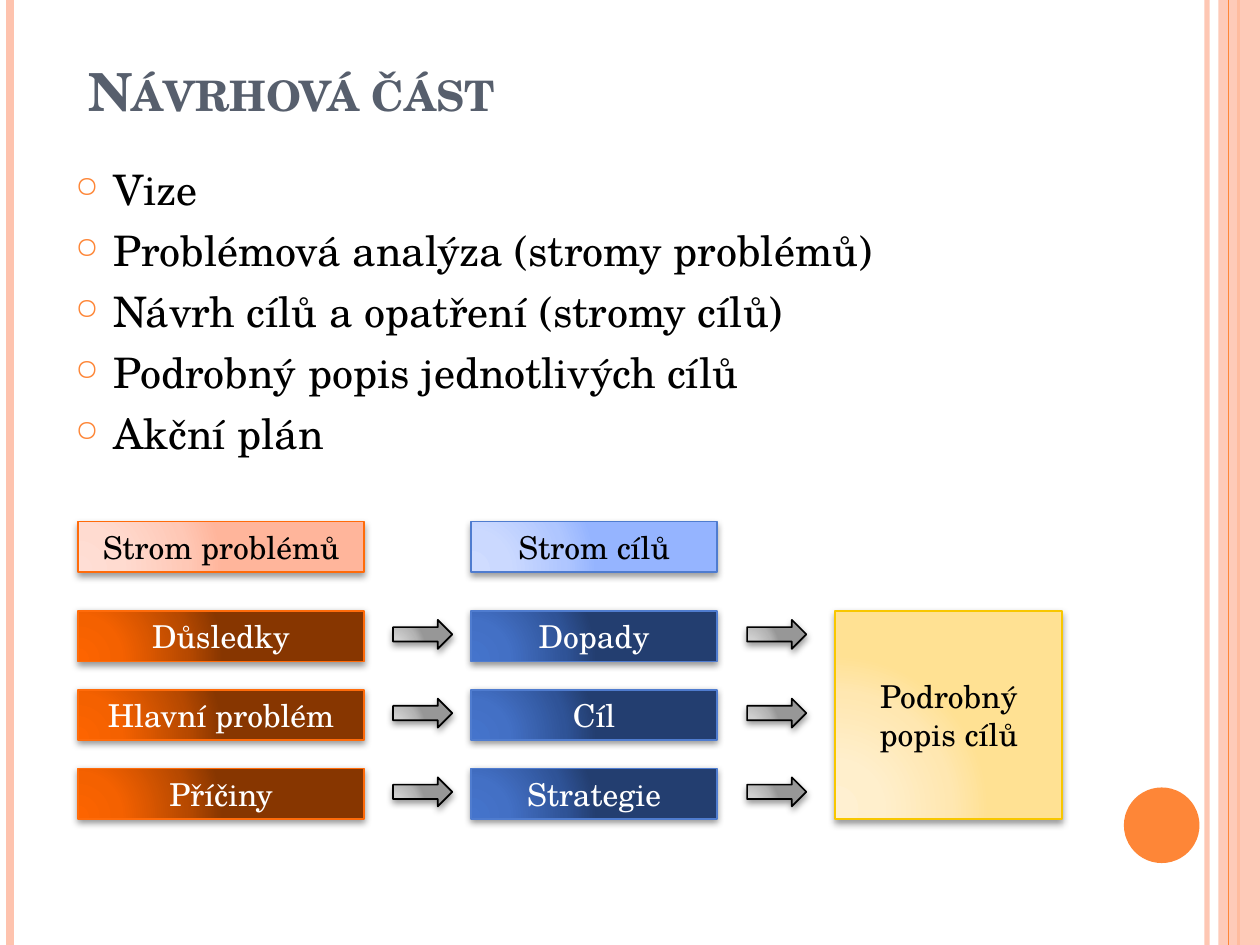
from pptx import Presentation, oxml
from pptx import util as u
from pptx.dml import color
from pptx.enum import shapes, text
from pptx.oxml import ns

FONT = "TeX Gyre Schola"
ORANGE = ["FD6400", "F46100", "B74900", "873600"]
PEACH = ["FFDED5", "FFDBD0", "FFC8B6", "FFB59B"]
BLUE = ["4574CC", "4370C5", "2F5397", "233E70"]
SKY = ["CFDCFF", "CBD9FF", "AFC6FF", "95B4FF"]
GREY = ["D3D3D3", "CFCFCF", "B4B4B4", "979797"]
CREAM = ["FFF0D1", "FFEFCC", "FFE7B1", "FFE193"]
KIND = shapes.MSO_SHAPE
HIGH = 0.4


def paint(fill, tone, alpha=100):
    """Fill with a hex colour at a percentage of opacity."""
    fill.solid()
    fill.fore_color.rgb = color.RGBColor.from_string(tone)
    if alpha < 100:
        clr = fill._xPr.find(".//" + ns.qn("a:srgbClr"))
        clr.append(oxml.parse_xml(
            f'<a:alpha {ns.nsdecls("a")} val="{alpha * 1000}"/>'))


def write(para, words, size=18, tone="000000", bold=False, small=False,
          align=None, before=0):
    """Put one formatted run into a paragraph."""
    para.alignment = align
    para.space_before = u.Pt(before)
    run = para.add_run()
    run.text = words
    run.font.name = FONT
    run.font.size = u.Pt(size)
    run.font.bold = bold
    paint(run.font.fill, tone)
    if small:
        run.font._element.set("cap", "small")


def place(slide, kind, box):
    """Add a preset shape at a box in inches."""
    return slide.shapes.add_shape(kind, *map(u.Inches, box))


def shade(shape, tones, edge, alpha=40, dist=2):
    """Give a shape its radial gradient, outline and soft shadow."""
    stops = "".join(
        f'<a:gs pos="{pos * 1000}"><a:srgbClr val="{tone}"/></a:gs>'
        for pos, tone in zip((0, 30, 75, 100), tones))
    props = shape._element.spPr
    props.find(ns.qn("a:prstGeom")).addnext(oxml.parse_xml(
        f'<a:gradFill {ns.nsdecls("a")} rotWithShape="1"><a:gsLst>{stops}'
        '</a:gsLst><a:path path="circle"><a:fillToRect l="5000" t="100000" '
        'r="120000" b="10000"/></a:path></a:gradFill>'))
    paint(shape.line.fill, edge)
    shape.line.width = u.Pt(1)
    props.append(oxml.parse_xml(
        f'<a:effectLst {ns.nsdecls("a")}><a:outerShdw blurRad="{u.Pt(4)}" '
        f'dist="{u.Pt(dist)}" dir="5400000" rotWithShape="0">'
        f'<a:srgbClr val="000000"><a:alpha val="{alpha * 1000}"/></a:srgbClr>'
        '</a:outerShdw></a:effectLst>'))


def card(slide, box, words, tones, edge, tone="000000", **shadow):
    """Add a shaded box with centred text."""
    shape = place(slide, KIND.RECTANGLE, box)
    shade(shape, tones, edge, **shadow)
    frame = shape.text_frame
    frame.word_wrap = True
    frame.vertical_anchor = text.MSO_ANCHOR.MIDDLE
    write(frame.paragraphs[0], words, tone=tone, align=text.PP_ALIGN.CENTER)


def rule(slide, left, tone, width, alpha=100):
    """Draw a vertical line over the full slide height."""
    line = slide.shapes.add_connector(
        shapes.MSO_CONNECTOR.STRAIGHT, u.Inches(left), 0,
        u.Inches(left), u.Inches(7.5))
    paint(line.line.fill, tone, alpha)
    line.line.width = u.Pt(width)
    line._element.spPr.append(
        oxml.parse_xml(f'<a:effectLst {ns.nsdecls("a")}/>'))


def plain(slide, kind, box, tone, alpha=100):
    """Add a flat shape without outline."""
    shape = place(slide, kind, box)
    shape.shadow.inherit = False
    paint(shape.fill, tone, alpha)
    shape.line.fill.background()


def frame_page(slide):
    """Draw the side rules, the band and the dot."""
    rule(slide, 9.58, "FEC3AE", 3, 93)
    rule(slide, 0.08, "FEC3AE", 4.5)
    rule(slide, 9.83, "FE8637", 1.5)
    plain(slide, KIND.RECTANGLE, (9.67, 0, 0.33, 7.5), "FEC3AE", 87)
    rule(slide, 9.75, "FE8637", 0.75)
    plain(slide, KIND.OVAL, (8.92, 6.25, 0.6, 0.6), "FE8637")


def head(slide, box, words):
    """Place and format the title."""
    title = slide.shapes.title
    title.left, title.top, title.width, title.height = map(u.Inches, box)
    frame = title.text_frame
    frame.auto_size = text.MSO_AUTO_SIZE.NONE
    frame.vertical_anchor = text.MSO_ANCHOR.BOTTOM
    frame.margin_left = u.Inches(0.2)
    write(frame.paragraphs[0], words, size=30, tone="575F6D", bold=True,
          small=True, align=text.PP_ALIGN.LEFT)


def bullets(slide, box, items):
    """Add the bulleted list."""
    frame = slide.shapes.add_textbox(*map(u.Inches, box)).text_frame
    frame.word_wrap = True
    for num, item in enumerate(items):
        para = frame.add_paragraph() if num else frame.paragraphs[0]
        write(para, item, size=24, before=6)
        props = para._p.get_or_add_pPr()
        props.set("marL", str(u.Inches(0.3)))
        props.set("indent", str(u.Inches(-0.3)))
        for part in ('buClr {}><a:srgbClr val="FE8637"/></a:buClr>',
                     'buSzPct {} val="70000"/>', 'buChar {} char="○"/>'):
            props.append(oxml.parse_xml(
                "<a:" + part.format(ns.nsdecls("a"))))


def tree(slide, box, name, items, light, dark, edge, step):
    """Stack a heading box and its levels, each followed by an arrow."""
    left, top, width, gap = box
    card(slide, (left, top, width, HIGH), name, light, edge)
    for num, item in enumerate(items):
        row = top + 0.71 + num * step
        card(slide, (left, row, width, HIGH), item, dark, edge,
             tone="FFFFFF", alpha=42, dist=1.6)
        arrow = place(slide, KIND.RIGHT_ARROW,
                      (left + width + gap, row + 0.07, 0.47, 0.23))
        shade(arrow, GREY, "000000")


def diagram(slide, left, top):
    """Lead from both trees to the detailed description."""
    step = 0.625
    tree(slide, (left, top, 2.27, 0.23), "Strom problémů",
         ["Důsledky", "Hlavní problém", "Příčiny"],
         PEACH, ORANGE, "FF6B0A", step)
    tree(slide, (left + 3.12, top, 1.95, 0.24), "Strom cílů",
         ["Dopady", "Cíl", "Strategie"], SKY, BLUE, "4F7CCF", step)
    card(slide, (left + 6.01, top + 0.71, 1.8, 2 * step + HIGH),
         "Podrobný popis cílů", CREAM, "F8C700")


def main():
    """Build the slide and save it."""
    deck = Presentation()
    deck.slide_width, deck.slide_height = u.Inches(10), u.Inches(7.5)
    slide = deck.slides.add_slide(deck.slide_layouts.get_by_name("Title Only"))
    frame_page(slide)
    head(slide, (0.5, 0.3, 8.17, 0.72), "Návrhová část")
    bullets(slide, (0.5, 1.25, 8.17, 5.83), [
        "Vize",
        "Problémová analýza (stromy problémů)",
        "Návrh cílů a opatření (stromy cílů)",
        "Podrobný popis jednotlivých cílů",
        "Akční plán",
    ])
    diagram(slide, 0.62, 4.14)
    deck.save("out.pptx")


if __name__ == "__main__":
    main()
